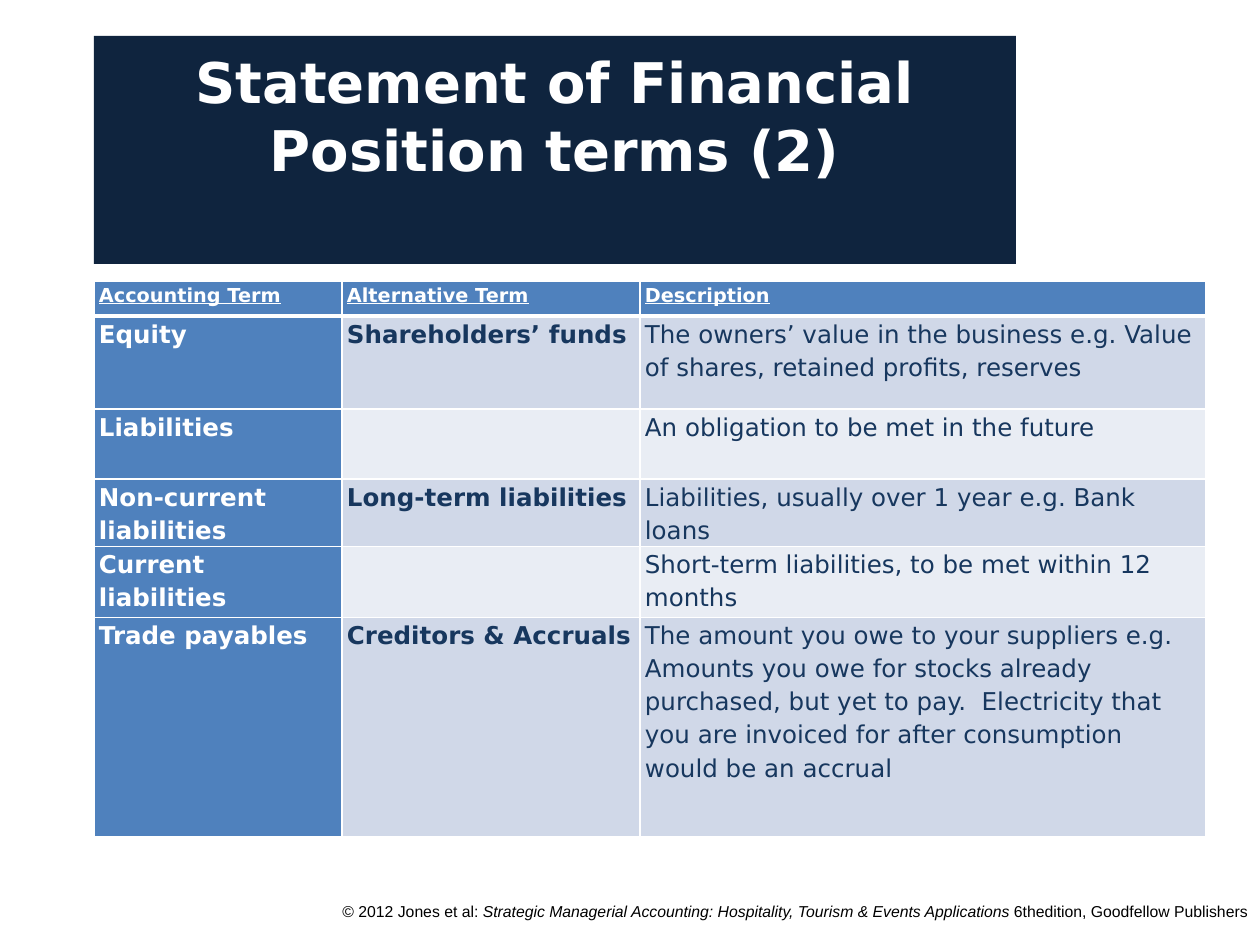
from lxml import etree
from pptx import Presentation
from pptx import util as u
from pptx.dml.color import RGBColor
from pptx.enum import shapes, text
from pptx.oxml.ns import qn

EMU_PER_PX = 914400 / 126

WHITE = RGBColor(0xFF, 0xFF, 0xFF)
BLACK = RGBColor(0x00, 0x00, 0x00)
NAVY = RGBColor(0x0F, 0x24, 0x3E)
INK = RGBColor(0x17, 0x37, 0x5E)
BLUE = RGBColor(0x4F, 0x81, 0xBD)
BANDS = (RGBColor(0xD0, 0xD8, 0xE8), RGBColor(0xE9, 0xED, 0xF4))

HEADER = ("Accounting Term", "Alternative Term", "Description")
TERMS = (
    ("Equity", "Shareholders’ funds",
     "The owners’ value in the business e.g. Value of shares, retained profits, reserves"),
    ("Liabilities", "", "An obligation to be met in the future"),
    ("Non-current liabilities", "Long-term liabilities",
     "Liabilities, usually over 1 year e.g. Bank loans"),
    ("Current liabilities", "", "Short-term liabilities, to be met within 12 months"),
    ("Trade payables", "Creditors & Accruals",
     "The amount you owe to your suppliers e.g. Amounts you owe for stocks already "
     "purchased, but yet to pay.  Electricity that you are invoiced for after "
     "consumption would be an accrual"),
)
COLUMN_WIDTHS = (248, 298, 566)
ROW_HEIGHTS = (35, 93, 70, 66, 71, 219)


def px(length):
    return u.Emu(round(length * EMU_PER_PX))


def add_span(para, words, size, color, font="DejaVu Sans",
             bold=False, italic=False, underline=False):
    span = para.add_run()
    span.text = words
    span.font.name = font
    span.font.size = u.Pt(size)
    span.font.color.rgb = color
    span.font.bold = bold
    span.font.italic = italic
    span.font.underline = underline


def add_border(cell, side, points):
    """Draw one white edge; call before the cell gets its fill."""
    line = etree.SubElement(cell._tc.get_or_add_tcPr(), qn(f"a:ln{side}"),
                            w=str(u.Pt(points)))
    fill = etree.SubElement(line, qn("a:solidFill"))
    etree.SubElement(fill, qn("a:srgbClr"), val=str(WHITE))


class SlideBuilder:
    def __init__(self, deck):
        self.page = deck.slides.add_slide(deck.slide_layouts[6])

    def title(self, words, left, top, width, height):
        box = self.page.shapes.add_shape(
            shapes.MSO_SHAPE.RECTANGLE, *map(px, (left, top, width, height)))
        box.shadow.inherit = False
        box.fill.solid()
        box.fill.fore_color.rgb = NAVY
        box.line.fill.background()
        frame = box.text_frame
        frame.word_wrap = True
        frame.vertical_anchor = text.MSO_ANCHOR.TOP
        frame.margin_top = px(12)
        para = frame.paragraphs[0]
        para.alignment = text.PP_ALIGN.CENTER
        add_span(para, words, 32, WHITE, bold=True)

    def footer(self, spans, left, top, width, height):
        box = self.page.shapes.add_textbox(*map(px, (left, top, width, height)))
        box.text_frame.word_wrap = True
        para = box.text_frame.paragraphs[0]
        para.alignment = text.PP_ALIGN.RIGHT
        for words, italic in spans:
            add_span(para, words, 9, BLACK, font="Arial", italic=italic)

    def table(self, rows, left, top):
        frame = self.page.shapes.add_table(
            len(rows), len(COLUMN_WIDTHS), px(left), px(top),
            px(sum(COLUMN_WIDTHS)), px(sum(ROW_HEIGHTS)))
        grid = frame.table
        for column, width in zip(grid.columns, COLUMN_WIDTHS):
            column.width = px(width)
        for row, height in zip(grid.rows, ROW_HEIGHTS):
            row.height = px(height)
        for r, row in enumerate(rows):
            for c, words in enumerate(row):
                self.cell(grid.cell(r, c), words, r, c)

    def cell(self, cell, words, row, column):
        is_header = row == 0
        on_blue = is_header or column == 0
        cell.margin_left = cell.margin_right = px(5)
        cell.margin_top = cell.margin_bottom = 0
        add_border(cell, "L", 1)
        add_border(cell, "R", 1)
        add_border(cell, "T", 3 if row == 1 else 1)
        add_border(cell, "B", 3 if is_header else 1)
        cell.fill.solid()
        cell.fill.fore_color.rgb = BLUE if on_blue else BANDS[(row - 1) % 2]
        if words:
            para = cell.text_frame.paragraphs[0]
            para.line_spacing = 1.15
            add_span(para, words, 11 if is_header else 14,
                     WHITE if on_blue else INK,
                     bold=is_header or column < 2, underline=is_header)


def main():
    deck = Presentation()
    deck.slide_width, deck.slide_height = px(1260), px(945)
    slide = SlideBuilder(deck)
    slide.footer((
        ("© 2012 Jones et al: ", False),
        ("Strategic Managerial Accounting: Hospitality, Tourism & Events Applications ", True),
        ("6thedition, Goodfellow Publishers", False),
    ), 281, 896, 979, 49)
    slide.title("Statement of Financial Position terms (2)", 94, 36, 922, 228)
    slide.table((HEADER, *TERMS), 94, 281)
    deck.save("out.pptx")


if __name__ == "__main__":
    main()
